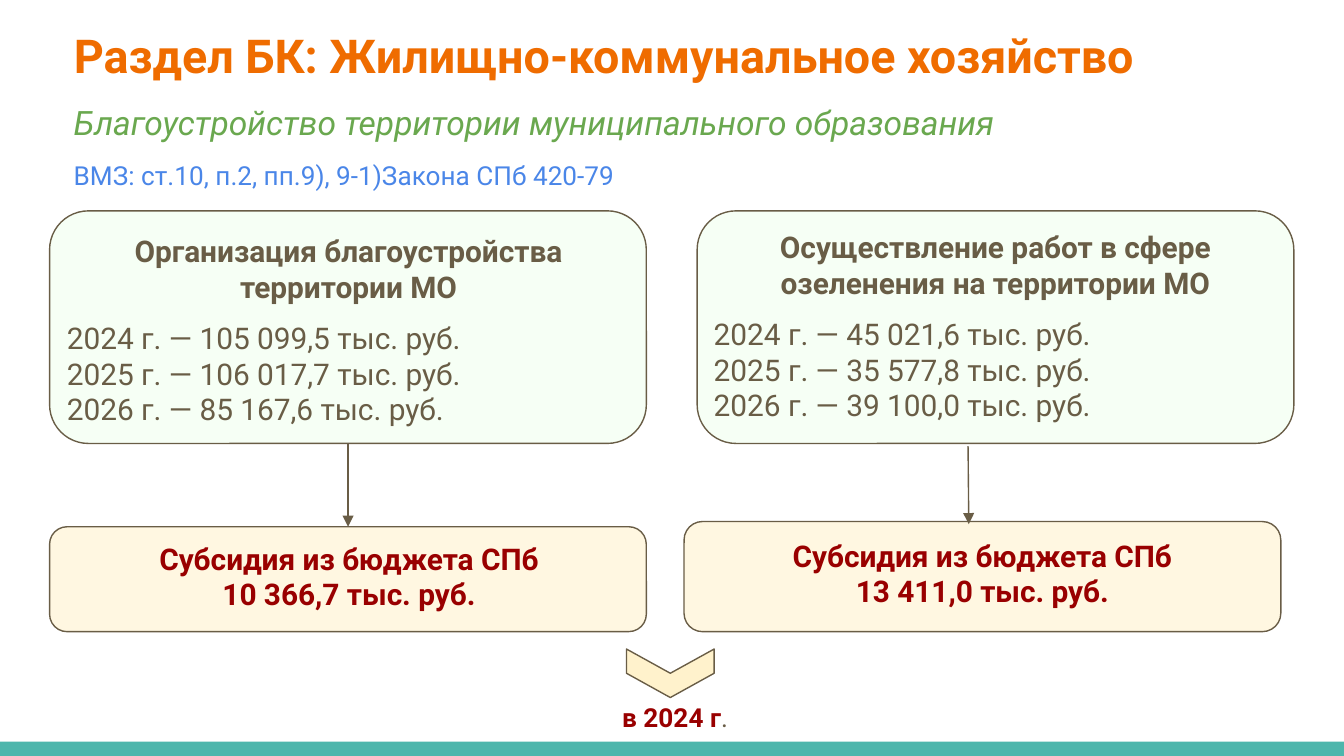
from lxml.etree import SubElement
from pptx import Presentation
from pptx.dml.color import RGBColor
from pptx.enum.shapes import MSO_CONNECTOR, MSO_SHAPE
from pptx.enum.text import MSO_ANCHOR, MSO_AUTO_SIZE, PP_ALIGN
from pptx.oxml.ns import qn
from pptx.util import Pt

COLORS = {
    "orange": "EF6C00",
    "green": "6AA84F",
    "blue": "4A86E8",
    "brown": "695D46",
    "red": "990000",
    "mint": "F6FFF5",
    "cream": "FFF7E1",
    "yellow": "FFF2CC",
    "teal": "4DB6AC",
}
BOX_WIDTH = 319.7


class SlideBuilder:
    font_name = "Roboto"
    line_width = Pt(0.75)
    frame_format = {
        "margin_left": Pt(7.2),
        "margin_top": Pt(7.2),
        "margin_right": Pt(7.2),
        "margin_bottom": Pt(7.2),
        "word_wrap": True,
        "auto_size": MSO_AUTO_SIZE.NONE,
        "vertical_anchor": MSO_ANCHOR.TOP,
    }

    def __init__(self, slide):
        self.slide = slide

    def color(self, name):
        return RGBColor.from_string(COLORS[name])

    def add_run(self, paragraph, text, size, color, **font_format):
        run = paragraph.add_run()
        run.text = text
        values = {"name": self.font_name, "size": Pt(size), "bold": False, **font_format}
        for name, value in values.items():
            setattr(run.font, name, value)
        run.font.color.rgb = self.color(color)

    def format_frame(self, frame):
        for name, value in self.frame_format.items():
            setattr(frame, name, value)

    def title(self, text, position, size, color):
        title = self.slide.shapes.title
        title.left, title.top, title.width, title.height = map(Pt, position)
        self.format_frame(title.text_frame)
        paragraph = title.text_frame.paragraphs[0]
        paragraph.alignment = PP_ALIGN.LEFT
        self.add_run(paragraph, text, size, color, bold=True)

    def text(self, lines, position, size, color, **paragraph_format):
        frame = self.slide.shapes.add_textbox(*map(Pt, position)).text_frame
        self.format_frame(frame)
        for index, (line, font_format) in enumerate(lines):
            paragraph = frame.paragraphs[0] if index == 0 else frame.add_paragraph()
            for name, value in paragraph_format.items():
                setattr(paragraph, name, value)
            self.add_run(paragraph, line, size, color, **font_format)
        return frame

    def shape(self, kind, position, fill, line=None, adjustment=None, rotation=0):
        shape = self.slide.shapes.add_shape(kind, *map(Pt, position))
        shape.shadow.inherit = False
        shape.rotation = rotation
        shape.fill.solid()
        shape.fill.fore_color.rgb = self.color(fill)
        if line:
            shape.line.color.rgb = self.color(line)
            shape.line.width = self.line_width
        else:
            shape.line.fill.background()
        if adjustment is not None:
            shape.adjustments[0] = adjustment
        return shape

    def box(self, position, fill):
        return self.shape(MSO_SHAPE.ROUNDED_RECTANGLE, position, fill, "brown", 0.167)

    def arrow(self, start=(0, 0), end=(0, 0), joined=None):
        arrow = self.slide.shapes.add_connector(
            MSO_CONNECTOR.STRAIGHT, *map(Pt, (*start, *end))
        )
        if joined:
            arrow.begin_connect(joined[0], 2)
            arrow.end_connect(joined[1], 0)
        arrow.line.color.rgb = self.color("brown")
        arrow.line.width = self.line_width
        SubElement(arrow.line._get_or_add_ln(), qn("a:tailEnd"), type="triangle")
        SubElement(arrow._element.spPr, qn("a:effectLst"))

    def budget(self, heading, amounts, position):
        lines = [(heading, {"bold": True})]
        lines += [
            (f"{year} г. — {amount} тыс. руб.", {})
            for year, amount in zip((2024, 2025, 2026), amounts)
        ]
        frame = self.text(lines, position, 16, "brown")
        frame.paragraphs[0].alignment = PP_ALIGN.CENTER
        frame.paragraphs[0].space_after = Pt(8.2)

    def subsidy(self, amount, position):
        lines = ["Субсидия из бюджета СПб", f"{amount} тыс. руб."]
        self.text(
            [(line, {"bold": True}) for line in lines],
            position, 16, "red", alignment=PP_ALIGN.CENTER,
        )


def main():
    presentation = Presentation()
    presentation.slide_width = Pt(720)
    presentation.slide_height = Pt(405)
    slide = presentation.slides.add_slide(presentation.slide_layouts[5])
    builder = SlideBuilder(slide)

    builder.shape(MSO_SHAPE.RECTANGLE, (0, 397.4, 720, 7.6), "teal")
    builder.title(
        "Раздел БК: Жилищно-коммунальное хозяйство", (32.4, 7.2, 671, 41.8), 25, "orange"
    )
    subtitles = [
        ("Благоустройство территории муниципального образования", 44, 18, "green", True),
        ("ВМЗ: ст.10, п.2, пп.9), 9-1)Закона СПб 420-79", 75.6, 14, "blue", False),
    ]
    for text, top, size, color, italic in subtitles:
        builder.text(
            [(text, {"italic": italic})], (32.4, top, 671, 28.8), size, color,
            line_spacing=1.15, space_after=Pt(12),
        )

    budget_boxes = [
        builder.box((left, 113, BOX_WIDTH, 124.6), "mint") for left in (26.6, 373.5)
    ]
    subsidy_boxes = [
        builder.box((left, top, BOX_WIDTH, 338.4 - top), "cream")
        for left, top in ((26.6, 282.2), (366.5, 279.4))
    ]
    builder.budget(
        "Организация благоустройства территории МО",
        ("105 099,5", "106 017,7", "85 167,6"),
        (28.8, 117.4, 316, 120.2),
    )
    builder.budget(
        "Осуществление работ в сфере озеленения на территории МО",
        ("45 021,6", "35 577,8", "39 100,0"),
        (375.3, 115.2, 316, 120.2),
    )
    builder.subsidy("10 366,7", (27.2, 282.2, BOX_WIDTH, 56.2))
    builder.subsidy("13 411,0", (366.5, 280.6, BOX_WIDTH, 56.2))
    builder.arrow(joined=(budget_boxes[0], subsidy_boxes[0]))
    builder.arrow((518.6, 239), (519, 280.8))

    builder.shape(
        MSO_SHAPE.CHEVRON, (346.1, 337.2, 26, 47), "yellow", "brown", 0.5, rotation=90
    )
    year = builder.text(
        [("в 2024 г", {"bold": True})], (326.2, 368.6, 99.4, 20.2), 14, "red"
    )
    builder.add_run(year.paragraphs[0], ".", 14, "brown")

    presentation.save("out.pptx")


if __name__ == "__main__":
    main()
